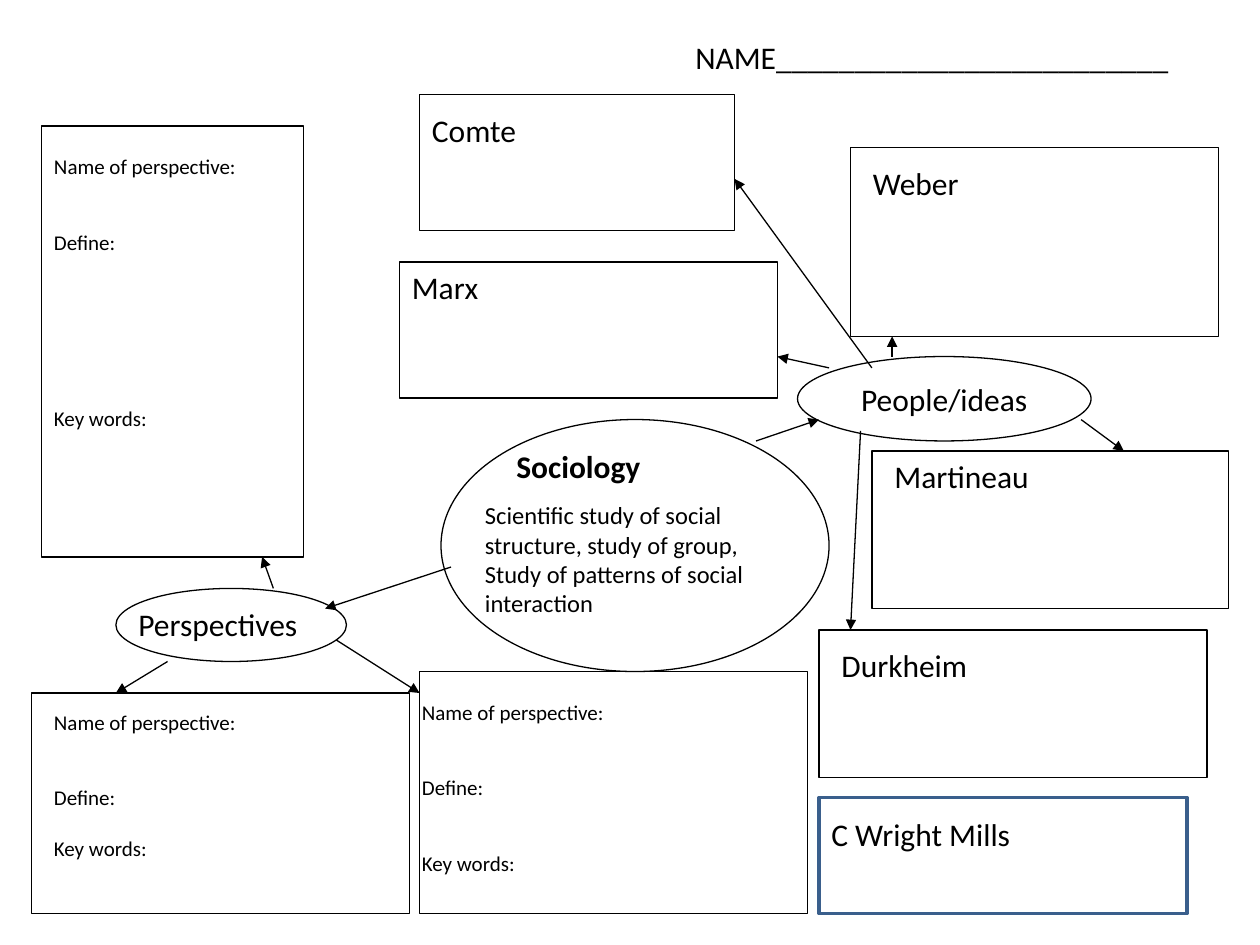
from lxml import etree
from pptx import Presentation
from pptx.dml.color import RGBColor
from pptx.enum.shapes import MSO_CONNECTOR, MSO_SHAPE
from pptx.enum.text import MSO_ANCHOR, PP_ALIGN
from pptx.oxml.ns import qn
from pptx.util import Inches, Pt

BLACK = RGBColor(0x00, 0x00, 0x00)
WHITE = RGBColor(0xFF, 0xFF, 0xFF)
BLUE = RGBColor(0x3A, 0x5F, 0x8C)
FONT = "Calibri"
LINE_PITCH = 14.4
LABEL_HEIGHT = 0.4

SOCIOLOGY_OVAL = (3.5, 3.33, 3.08, 2)
PERSPECTIVES_OVAL = (0.92, 4.67, 1.83, 0.58)
PEOPLE_OVAL = (6.33, 2.83, 2.33, 0.67)

PERSPECTIVE_BOXES = [
    (0.25, 5.5, 3, 1.75),
    (0.33, 1, 2.08, 3.42),
    (3.33, 5.33, 3.08, 1.92),
]
PEOPLE_BOXES = [
    (3.33, 0.75, 2.5, 1.08),
    (6.92, 3.58, 2.83, 1.25),
    (3.17, 2.08, 3, 1.08),
    (6.5, 5, 3.08, 1.17),
    (6.75, 1.17, 2.92, 1.5),
]
MILLS_BOX = (6.5, 6.33, 2.92, 0.92)

ARROWS = [
    ((3.58, 4.5), (2.58, 4.83)),
    ((1.33, 5.25), (0.92, 5.5)),
    ((2.67, 5.08), (3.33, 5.5)),
    ((2.17, 4.67), (2.08, 4.42)),
    ((6, 3.5), (6.5, 3.33)),
    ((8.58, 3.33), (8.92, 3.58)),
    ((6.83, 3.42), (6.75, 5)),
    ((6.58, 2.92), (6.17, 2.83)),
    ((7.08, 2.83), (7.08, 2.67)),
    ((6.92, 2.92), (5.83, 1.42)),
]

LABELS = [
    ("Perspectives", 1, 4.75, 1.63),
    ("Comte", 3.33, 0.83, 0.94),
    ("Marx", 3.17, 2.08, 0.76),
    ("Weber", 6.83, 1.25, 0.94),
    ("Martineau", 7, 3.58, 1.31),
    ("Durkheim", 6.58, 5.08, 1.27),
    ("NAME" + "_" * 25, 5.42, 0.25, 4.44),
    ("C Wright Mills", 6.5, 6.42, 1.64),
]
DEFINITION = [
    "Scientific study of social",
    "structure, study of group,",
    "Study of patterns of social",
    "interaction",
]
PROMPTS = ["Name of perspective:", "Define:", "Key words:"]
PROMPT_SETS = [
    ((0.33, 1.17, 1.79, 2.32), (0, 2, 6)),
    ((0.33, 5.58, 2.5, 1.31), (0, 2, 1)),
    ((3.25, 5.5, 3.08, 1.51), (0, 2, 2)),
]


def add_outline(slide, kind, place, fill=None, color=BLACK, weight=0.75):
    outline = slide.shapes.add_shape(kind, *map(Inches, place))
    outline.shadow.inherit = False
    if fill is None:
        outline.fill.background()
    else:
        outline.fill.solid()
        outline.fill.fore_color.rgb = fill
    outline.line.color.rgb = color
    outline.line.width = Pt(weight)
    return outline


def write_lines(frame, lines, size, bold=False, gaps=None, wrap=False):
    frame.word_wrap = wrap
    for index, text in enumerate(lines):
        paragraph = frame.paragraphs[0] if index == 0 else frame.add_paragraph()
        paragraph.text = text
        paragraph.font.name = FONT
        paragraph.font.size = Pt(size)
        paragraph.font.bold = bold
        paragraph.font.color.rgb = BLACK
        if gaps:
            paragraph.space_before = Pt(gaps[index] * LINE_PITCH)


def add_text(slide, place, lines, size, **style):
    text_box = slide.shapes.add_textbox(*map(Inches, place))
    write_lines(text_box.text_frame, lines, size, **style)


def add_arrow(slide, start, end):
    arrow = slide.shapes.add_connector(
        MSO_CONNECTOR.STRAIGHT, *map(Inches, (*start, *end)))
    arrow.line.color.rgb = BLACK
    arrow.line.width = Pt(0.75)
    etree.SubElement(arrow.line._get_or_add_ln(), qn("a:tailEnd"), type="triangle")
    etree.SubElement(arrow._element.spPr, qn("a:effectLst"))


def main():
    deck = Presentation()
    deck.slide_width, deck.slide_height = Inches(10), Inches(7.5)
    slide = deck.slides.add_slide(deck.slide_layouts[6])

    add_outline(slide, MSO_SHAPE.OVAL, SOCIOLOGY_OVAL)
    add_outline(slide, MSO_SHAPE.OVAL, PERSPECTIVES_OVAL)
    for place in PERSPECTIVE_BOXES:
        add_outline(slide, MSO_SHAPE.RECTANGLE, place)

    people = add_outline(slide, MSO_SHAPE.OVAL, PEOPLE_OVAL, WHITE)
    write_lines(people.text_frame, ["People/ideas"], 18)
    people.text_frame.vertical_anchor = MSO_ANCHOR.MIDDLE
    people.text_frame.paragraphs[0].alignment = PP_ALIGN.CENTER
    for place in PEOPLE_BOXES:
        add_outline(slide, MSO_SHAPE.RECTANGLE, place, WHITE)
    add_outline(slide, MSO_SHAPE.RECTANGLE, MILLS_BOX, color=BLUE, weight=2)

    for start, end in ARROWS:
        add_arrow(slide, start, end)

    add_text(slide, (4, 3.5, 1.4, LABEL_HEIGHT), ["Sociology"], 18, bold=True)
    add_text(slide, (3.75, 3.92, 2.49, 1.03), DEFINITION, 14)
    for label, left, top, width in LABELS:
        add_text(slide, (left, top, width, LABEL_HEIGHT), [label], 18)
    for place, gaps in PROMPT_SETS:
        add_text(slide, place, PROMPTS, 12, gaps=gaps, wrap=True)

    deck.save("out.pptx")


if __name__ == "__main__":
    main()
